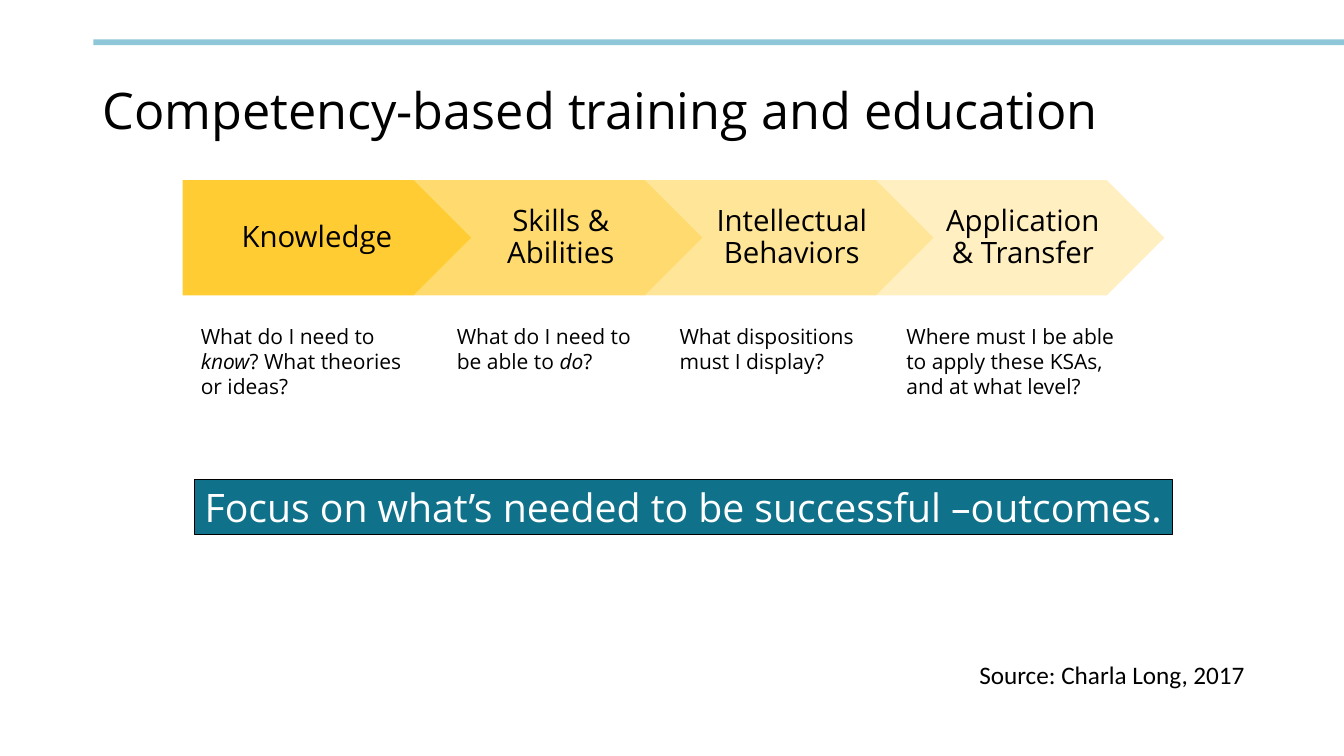
from pptx import Presentation
from pptx.dml.color import RGBColor
from pptx.enum.shapes import MSO_SHAPE
from pptx.enum.text import MSO_ANCHOR, PP_ALIGN
from pptx.oxml.ns import qn
from pptx.util import Pt
from lxml import etree

BLACK = RGBColor(0x00, 0x00, 0x00)
WHITE = RGBColor(0xFF, 0xFF, 0xFF)
YELLOW = RGBColor(0xFF, 0xCD, 0x33)
TEAL = RGBColor(0x10, 0x72, 0x8A)
LIGHT_BLUE = RGBColor(0x8E, 0xC7, 0xD7)
RECTANGLE, PENTAGON, CHEVRON = MSO_SHAPE.RECTANGLE, MSO_SHAPE.PENTAGON, MSO_SHAPE.CHEVRON
TOP, MIDDLE = MSO_ANCHOR.TOP, MSO_ANCHOR.MIDDLE
LEFT, CENTER = PP_ALIGN.LEFT, PP_ALIGN.CENTER

deck = Presentation()
deck.slide_width, deck.slide_height = Pt(960), Pt(540)
page = deck.slides.add_slide(deck.slide_layouts[6])


def add_block(kind, left, top, width, height, color):
    block = page.shapes.add_shape(kind, Pt(left), Pt(top), Pt(width), Pt(height))
    block.shadow.inherit = False
    block.fill.solid()
    block.fill.fore_color.rgb = color
    block.line.fill.background()
    return block


def write(box, runs, size, insets, align=LEFT, anchor=TOP, color=BLACK,
          font="Open Sans", spacing=1.0, wrap=True):
    """Fill a box with one paragraph; runs are (text, italic) pairs."""
    frame = box.text_frame
    frame.word_wrap = wrap
    frame.vertical_anchor = anchor
    (frame.margin_left, frame.margin_top,
     frame.margin_right, frame.margin_bottom) = [Pt(inset) for inset in insets]
    para = frame.paragraphs[0]
    para.alignment = align
    para.line_spacing = spacing
    for text, italic in runs:
        span = para.add_run()
        span.text = text
        span.font.name = font
        span.font.size = Pt(size)
        span.font.italic = italic
        span.font.color.rgb = color


WIDE_INSETS = (7.2, 3.6, 7.2, 3.6)
SLIM_INSETS = (5.25, 2.6, 5.25, 2.6)

# Top bar and title
add_block(RECTANGLE, 66.75, 28.1, 893.25, 4.2, LIGHT_BLUE)
title = page.shapes.add_textbox(Pt(66), Pt(28.75), Pt(828), Pt(104.4))
write(title, [("Competency-based training and education", False)], 36,
      WIDE_INSETS, anchor=MIDDLE, spacing=0.9)

# Chain of arrows, each paler than the one before
STEP_LEFT, STEP_PITCH, STEP_WIDTH, STEP_HEIGHT = 130.4, 165, 206.25, 82.5
steps = [
    (PENTAGON, "Knowledge", 100, 8.4),
    (CHEVRON, "Skills & Abilities", 70, 6.3),
    (CHEVRON, "Intellectual Behaviors", 50, 6.3),
    (CHEVRON, "Application & Transfer", 30, 6.3),
]
for index, (kind, label, opacity, left_inset) in enumerate(steps):
    step = add_block(kind, STEP_LEFT + index * STEP_PITCH, 128.6,
                     STEP_WIDTH, STEP_HEIGHT, YELLOW)
    if opacity < 100:
        fill_color = step.fill._xPr.find(qn("a:solidFill"))[0]
        etree.SubElement(fill_color, qn("a:alpha"), val=str(opacity * 1000))
    write(step, [(label, False)], 21, (left_inset, 4.2, 2.1, 4.2),
          align=CENTER, anchor=MIDDLE, spacing=0.9)

# Question under each arrow
questions = [
    (138.2, 154.8, 59.8, [("What do I need to ", False), ("know", True),
                          ("? What theories or ideas?", False)]),
    (321.1, 141.1, 41.8, [("What do I need to be able to ", False),
                          ("do", True), ("?", False)]),
    (480.2, 144, 41.8, [("What dispositions must I display?", False)]),
    (642.2, 163.4, 59.8, [("Where must I be able to apply these KSAs, "
                           "and at what level?", False)]),
]
for left, width, height, runs in questions:
    question = page.shapes.add_textbox(Pt(left), Pt(228.2), Pt(width), Pt(height))
    write(question, runs, 15, SLIM_INSETS)

# Message banner
banner = add_block(RECTANGLE, 138.8, 342.4, 698.6, 39.4, TEAL)
banner.line.color.rgb = BLACK
banner.line.width = Pt(0.75)
write(banner, [("Focus on what’s needed to be successful –outcomes.", False)], 28,
      SLIM_INSETS, align=CENTER, color=WHITE, wrap=False)

# Source line
source = page.shapes.add_textbox(Pt(692.4), Pt(467.5), Pt(226), Pt(29))
write(source, [("Source: Charla Long, 2017", False)], 18, WIDE_INSETS, font="Calibri")

deck.save("out.pptx")
